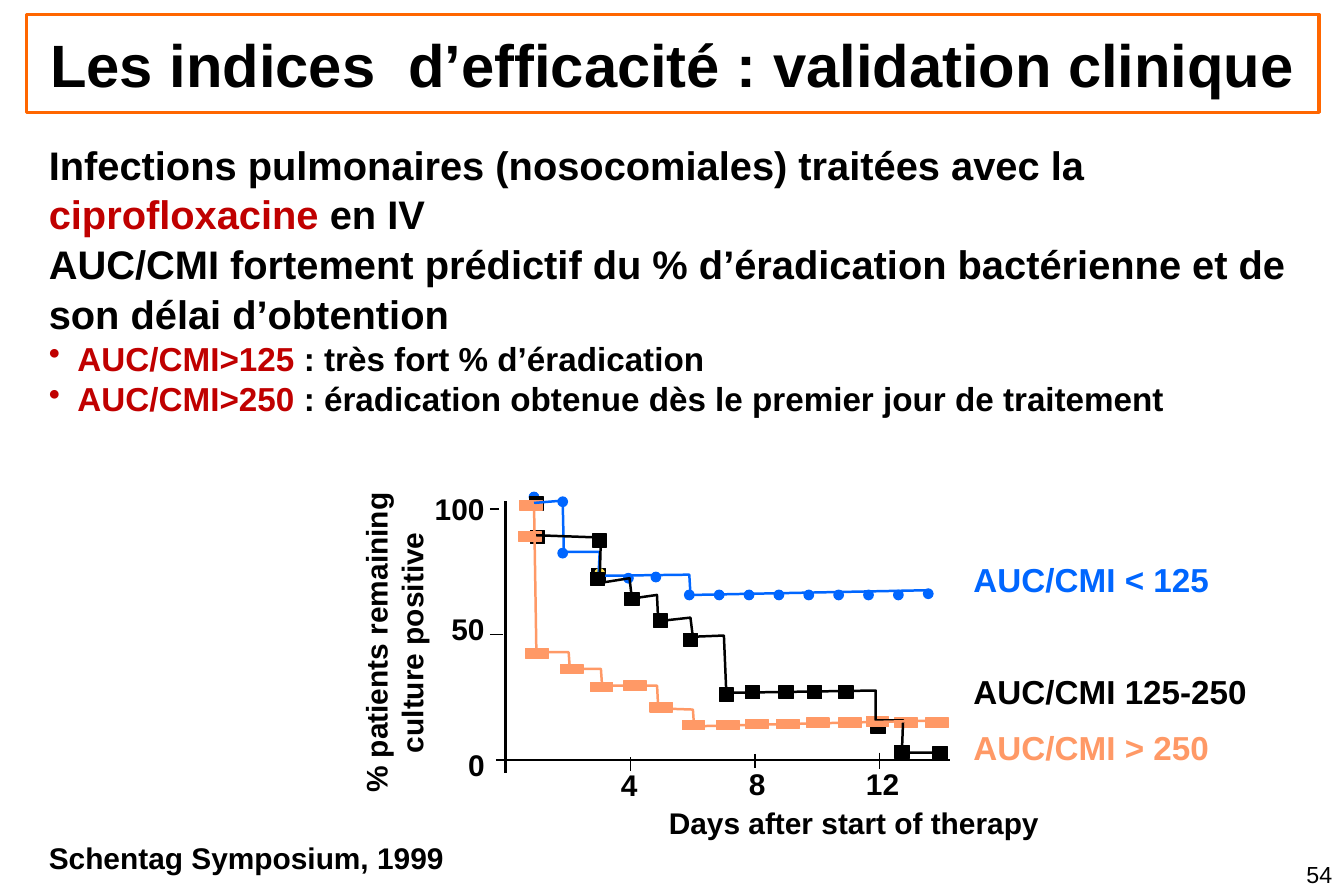
"""Build the slide on clinical validation of efficacy indices."""
from dataclasses import dataclass

from lxml.etree import SubElement
from pptx import Presentation
from pptx.dml.color import RGBColor
from pptx.enum.shapes import MSO_CONNECTOR, MSO_SHAPE
from pptx.enum.text import MSO_ANCHOR, PP_ALIGN
from pptx.oxml.ns import qn
from pptx.shapes.autoshape import Shape
from pptx.slide import Slide
from pptx.text.text import _Paragraph as Paragraph
from pptx.util import Inches, Pt

Point = tuple[float, float]


@dataclass(frozen=True)
class Theme:
    font: str = "Arial"
    black: str = "000000"
    white: str = "FFFFFF"
    red: str = "C00000"
    blue: str = "0066FF"
    orange: str = "FF9966"
    yellow: str = "FBDF53"
    frame: str = "FF6600"
    title: int = 36
    lead: int = 24
    detail: int = 20
    label: int = 18
    number: int = 14


THEME = Theme()


@dataclass(frozen=True)
class Markers:
    color: str
    kind: MSO_SHAPE
    size: Point
    corners: list[Point]


@dataclass(frozen=True)
class Trace:
    color: str
    points: list[Point]


@dataclass(frozen=True)
class Label:
    text: str
    box: tuple[float, float, float, float]
    size: int = THEME.label
    color: str = THEME.black
    bold: bool = True
    align: PP_ALIGN = PP_ALIGN.LEFT
    wrap: bool = False
    rotation: int = 0
    fill: str = ""


@dataclass(frozen=True)
class Statement:
    phrases: list[tuple[str, str]]
    size: int
    spacing: float
    bullet: bool = False


@dataclass(frozen=True)
class Segment:
    start: Point
    end: Point
    width: float = 0.75


DOT, SQUARE, BAR = (0.08, 0.08), (0.12, 0.11), (0.19, 0.08)

LAYERS = [
    Markers(THEME.black, MSO_SHAPE.RECTANGLE, SQUARE, [(4.95, 4.76)]),
    Markers(THEME.blue, MSO_SHAPE.OVAL, DOT, [
        (4.43, 4.12), (4.67, 4.16), (4.67, 4.59), (5.22, 4.8), (5.45, 4.79),
        *[(5.73 + 0.25 * step, 4.94) for step in range(8)], (7.73, 4.93)]),
    Markers(THEME.yellow, MSO_SHAPE.OVAL, DOT, [(4.98, 4.76)]),
    Markers(THEME.black, MSO_SHAPE.RECTANGLE, SQUARE, [
        (4.43, 4.16), (4.96, 4.47), (4.44, 4.44), (5.23, 4.96), (5.47, 5.14),
        (5.72, 5.3), (6.02, 5.76), (6.24, 5.74), (6.52, 5.74), (6.76, 5.74),
        (7.02, 5.74), (7.29, 6.03), (7.49, 6.24), (7.81, 6.25)]),
    Markers(THEME.orange, MSO_SHAPE.RECTANGLE, BAR, [
        (4.34, 4.45), (4.35, 4.19), (4.4, 5.43), (4.69, 5.56), (4.94, 5.71),
        (5.22, 5.7), (5.44, 5.88), (5.71, 6.03), (6, 6.03), (6.24, 6.02),
        (6.5, 6.02), (6.75, 6.01), (7.02, 6.01), (7.25, 6), (7.49, 6.01),
        (7.75, 6.01)]),
    Trace(THEME.blue, [
        (4.47, 4.21), (4.71, 4.19), (4.72, 4.62), (5.02, 4.62), (5.01, 4.82),
        (5.77, 4.81), (5.78, 4.98), (7.78, 4.94)]),
    Markers(THEME.black, MSO_SHAPE.RECTANGLE, SQUARE, [(4.94, 4.79)]),
    Trace(THEME.black, [
        (4.48, 4.48), (5.03, 4.5), (5.02, 4.88), (5.27, 4.84), (5.29, 5.01),
        (5.5, 4.98), (5.51, 5.2), (5.78, 5.17), (5.8, 5.33), (6.06, 5.32),
        (6.08, 5.8), (7.33, 5.78), (7.33, 6.03), (7.56, 6.03), (7.55, 6.3),
        (7.88, 6.3)]),
    Trace(THEME.orange, [
        (4.47, 4.22), (4.49, 5.46), (4.76, 5.46), (4.77, 5.6), (5.03, 5.6),
        (5.04, 5.74), (5.5, 5.74), (5.51, 5.93), (5.8, 5.94), (5.81, 6.08),
        (7.89, 6.03)]),
]

AXES = [
    Segment((4.23, 6.47), (4.23, 4.19), 1.5), Segment((4.15, 6.36), (7.95, 6.36), 1.5),
    Segment((5.28, 6.34), (5.28, 6.45)), Segment((6.32, 6.31), (6.32, 6.43)),
    Segment((7.36, 6.3), (7.36, 6.44)),
    Segment((4.1, 5.31), (4.21, 5.31)), Segment((4.1, 4.26), (4.18, 4.26)),
]

LABELS = [
    Label("100", (3.54, 4.06, 0.62, 0.4)),
    Label("50", (3.68, 5.06, 0.48, 0.4)),
    Label("0", (3.82, 6.2, 0.34, 0.4)),
    Label("4", (5.1, 6.37, 0.34, 0.4)),
    Label("8", (6.17, 6.36, 0.34, 0.4)),
    Label("12", (7.15, 6.36, 0.48, 0.4)),
    Label("Days after start of therapy", (5.5, 6.69, 3.3, 0.4)),
    Label("% patients remaining culture positive", (1.91, 5.03, 2.77, 0.7),
          align=PP_ALIGN.CENTER, wrap=True, rotation=270),
    Label("Schentag Symposium, 1999", (0.31, 6.98, 3.51, 0.4)),
    Label("AUC/CMI < 125", (8.05, 4.63, 2.19, 0.44), THEME.detail, THEME.blue),
    Label("AUC/CMI 125-250", (8.05, 5.57, 2.51, 0.44), THEME.detail),
    Label("AUC/CMI > 250", (8.05, 6.04, 2.19, 0.44), THEME.detail, THEME.orange,
          fill=THEME.white),
    Label("54", (8.34, 7.15, 2.91, 0.35), THEME.number, bold=False,
          align=PP_ALIGN.RIGHT, wrap=True),
]

STATEMENTS = [
    Statement([("Infections pulmonaires (nosocomiales) traitées avec la ", THEME.black),
               ("ciprofloxacine", THEME.red), (" en IV", THEME.black)], THEME.lead, 1.04),
    Statement([("AUC/CMI fortement prédictif du % d’éradication bactérienne et de "
                "son délai d’obtention", THEME.black)], THEME.lead, 1.04),
    Statement([("AUC/CMI>125", THEME.red),
               (" : très fort % d’éradication", THEME.black)], THEME.detail, 1.02, True),
    Statement([("AUC/CMI>250", THEME.red),
               (" : éradication obtenue dès le premier jour de traitement", THEME.black)],
              THEME.detail, 1.02, True),
]


def style_runs(paragraph: Paragraph, size: int, color: str, bold: bool = True) -> None:
    for run in paragraph.runs:
        run.font.name, run.font.size, run.font.bold = THEME.font, Pt(size), bold
        run.font.color.rgb = RGBColor.from_string(color)


def style_outline(shape: Shape, color: str, width: float) -> None:
    shape.line.color.rgb = RGBColor.from_string(color)
    shape.line.width = Pt(width)
    shape.shadow.inherit = False


def place_title(slide: Slide) -> None:
    title = slide.shapes.title
    title.left, title.top, title.width, title.height = map(Inches, (0.22, 0.12, 10.82, 0.82))
    style_outline(title, THEME.frame, 2)
    frame = title.text_frame
    frame.text = "Les indices  d’efficacité : validation clinique"
    frame.word_wrap, frame.vertical_anchor = True, MSO_ANCHOR.MIDDLE
    frame.margin_left = frame.margin_right = Inches(0.06)
    frame.paragraphs[0].alignment = PP_ALIGN.CENTER
    style_runs(frame.paragraphs[0], THEME.title, THEME.black)


def add_statements(slide: Slide) -> None:
    frame = slide.shapes.add_textbox(*map(Inches, (0.31, 1.11, 10.59, 2.73))).text_frame
    frame.word_wrap = True
    for index, statement in enumerate(STATEMENTS):
        paragraph = frame.add_paragraph() if index else frame.paragraphs[0]
        paragraph.line_spacing = statement.spacing
        for text, _ in statement.phrases:
            paragraph.add_run().text = text
        style_runs(paragraph, statement.size, THEME.black)
        for run, (_, color) in zip(paragraph.runs, statement.phrases):
            run.font.color.rgb = RGBColor.from_string(color)
        if statement.bullet:
            properties = paragraph._p.get_or_add_pPr()
            properties.set("marL", str(Inches(0.24)))
            properties.set("indent", str(-Inches(0.24)))
            SubElement(properties, qn("a:buChar")).set("char", "•")


def add_segment(slide: Slide, segment: Segment) -> None:
    line = slide.shapes.add_connector(
        MSO_CONNECTOR.STRAIGHT, *map(Inches, segment.start + segment.end))
    line.line.color.rgb = RGBColor.from_string(THEME.black)
    line.line.width = Pt(segment.width)
    SubElement(line._element.spPr, qn("a:effectLst"))


def add_markers(slide: Slide, markers: Markers) -> None:
    for corner in markers.corners:
        marker = slide.shapes.add_shape(markers.kind, *map(Inches, corner + markers.size))
        marker.fill.solid()
        marker.fill.fore_color.rgb = RGBColor.from_string(markers.color)
        style_outline(marker, markers.color, 0.75)


def add_trace(slide: Slide, trace: Trace) -> None:
    start, *rest = [(Inches(x), Inches(y)) for x, y in trace.points]
    builder = slide.shapes.build_freeform(*start)
    builder.add_line_segments(rest, close=False)
    curve = builder.convert_to_shape()
    curve.fill.background()
    style_outline(curve, trace.color, 1.5)


def add_label(slide: Slide, label: Label) -> None:
    box = slide.shapes.add_textbox(*map(Inches, label.box))
    box.rotation = label.rotation
    if label.fill:
        box.fill.solid()
        box.fill.fore_color.rgb = RGBColor.from_string(label.fill)
    box.text_frame.text = label.text
    box.text_frame.word_wrap = label.wrap
    paragraph = box.text_frame.paragraphs[0]
    paragraph.alignment = label.align
    style_runs(paragraph, label.size, label.color, label.bold)


def main() -> None:
    presentation = Presentation()
    presentation.slide_width, presentation.slide_height = Inches(11.25), Inches(7.5)
    slide = presentation.slides.add_slide(presentation.slide_layouts[5])
    place_title(slide)
    add_statements(slide)
    for segment in AXES:
        add_segment(slide, segment)
    for layer in LAYERS:
        if isinstance(layer, Markers):
            add_markers(slide, layer)
        else:
            add_trace(slide, layer)
    for label in LABELS:
        add_label(slide, label)
    presentation.save("out.pptx")


if __name__ == "__main__":
    main()
